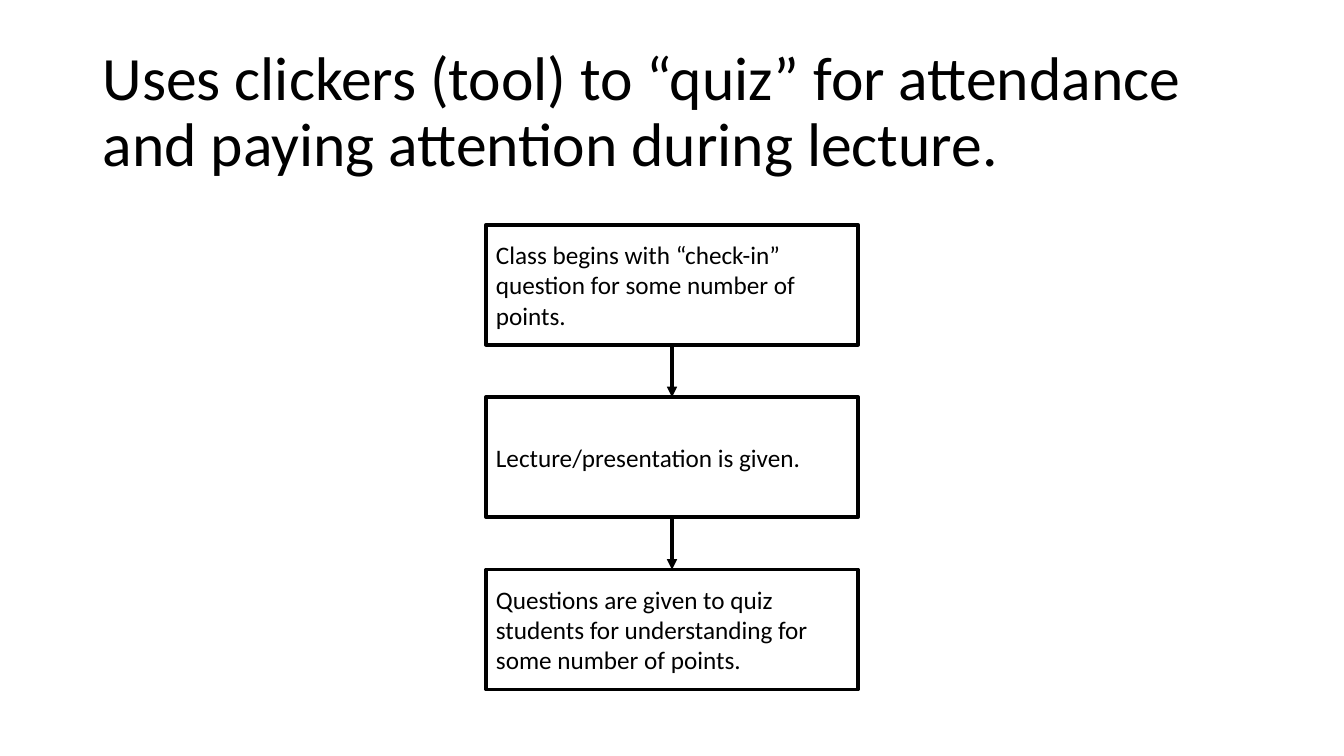
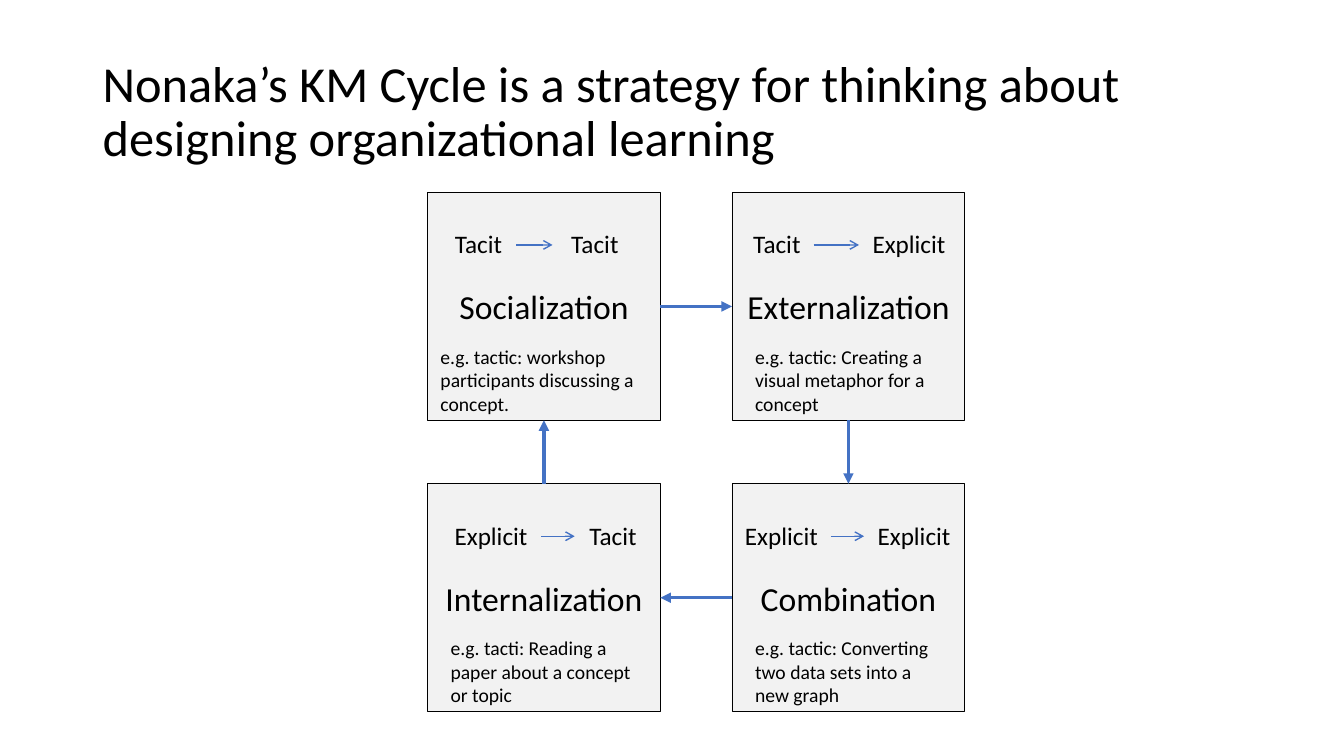
from lxml import etree
from pptx import Presentation
from pptx.dml.color import RGBColor
from pptx.enum.shapes import MSO_CONNECTOR, MSO_SHAPE
from pptx.enum.text import MSO_ANCHOR, MSO_AUTO_SIZE, PP_ALIGN
from pptx.oxml.ns import qn
from pptx.util import Pt

PX = 9144
SLIDE_WIDTH, SLIDE_HEIGHT = 1333, 750
FONT = "Calibri"
COLORS = {"ink": "000000", "panel": "F2F2F2", "accent": "4472C4"}
RECTANGLE = MSO_SHAPE.RECTANGLE
STRAIGHT = MSO_CONNECTOR.STRAIGHT
LEFT, CENTER = PP_ALIGN.LEFT, PP_ALIGN.CENTER
TOP, MIDDLE = MSO_ANCHOR.TOP, MSO_ANCHOR.MIDDLE
GROW = MSO_AUTO_SIZE.SHAPE_TO_FIT_TEXT
SITE_TOP, SITE_LEFT, SITE_BOTTOM, SITE_RIGHT = range(4)

TITLE_BOX = (92, 40, 1150, 145)
STEPS_BOX = (482, 223, 369, 461)
STEP_HEIGHT = 119
CYCLE_BOX = (424, 191, 533, 515)
CELL_WIDTH, CELL_HEIGHT = 231, 226

STEPS = [
    "Class begins with “check-in” question for some number of points.",
    "Lecture/presentation is given.",
    "Questions are given to quiz students for understanding for some number of points.",
]

# Each label and note is (text, left within the cell, width).
CELLS = [
    {"name": "Socialization", "column": 0, "row": 0,
     "source": ("Tacit", 13, 75), "target": ("Tacit", 124, 84),
     "note": ("e.g. tactic: workshop participants discussing a concept.", 3, 228)},
    {"name": "Externalization", "column": 1, "row": 0,
     "source": ("Tacit", 8, 73), "target": ("Explicit", 126, 99),
     "note": ("e.g. tactic: Creating a visual metaphor for a concept", 13, 205)},
    {"name": "Combination", "column": 1, "row": 1,
     "source": ("Explicit", 0, 98), "target": ("Explicit", 131, 99),
     "note": ("e.g. tactic: Converting two data sets into a new graph", 13, 205)},
    {"name": "Internalization", "column": 0, "row": 1,
     "source": ("Explicit", 13, 100), "target": ("Tacit", 146, 76),
     "note": ("e.g. tacti: Reading a paper about a concept or topic", 13, 205)},
]
CYCLE_SITES = [
    (SITE_RIGHT, SITE_LEFT),
    (SITE_BOTTOM, SITE_TOP),
    (SITE_LEFT, SITE_RIGHT),
    (SITE_TOP, SITE_BOTTOM),
]


def color(name):
    """Return the named palette colour."""
    return RGBColor.from_string(COLORS[name])


def emu(lengths):
    """Turn px lengths into EMU."""
    return [round(length * PX) for length in lengths]


def write(shape, text, size, alignment=LEFT, anchor=TOP):
    """Set one styled, wrapping paragraph in a shape and return it."""
    frame = shape.text_frame
    frame.text = text
    frame.word_wrap = True
    frame.vertical_anchor = anchor
    paragraph = frame.paragraphs[0]
    paragraph.alignment = alignment
    font = paragraph.runs[0].font
    font.name = FONT
    font.size = Pt(size)
    font.color.rgb = color("ink")
    return paragraph


def add_title(slide, text, size):
    """Add the slide title."""
    shape = slide.shapes.add_textbox(*emu(TITLE_BOX))
    write(shape, text, size, anchor=MIDDLE).line_spacing = 0.9


def add_label(shapes, box, text, size, alignment=LEFT):
    """Add a text box that grows with its text."""
    shape = shapes.add_textbox(*emu(box))
    write(shape, text, size, alignment)
    shape.text_frame.auto_size = GROW


def add_box(shapes, box, text, size, alignment, line_width, fill=None):
    """Add an outlined rectangle with text in its middle."""
    shape = shapes.add_shape(RECTANGLE, *emu(box))
    shape.shadow.inherit = False
    if fill:
        shape.fill.solid()
        shape.fill.fore_color.rgb = color(fill)
    else:
        shape.fill.background()
    shape.line.color.rgb = color("ink")
    shape.line.width = Pt(line_width)
    write(shape, text, size, alignment, MIDDLE)
    return shape


def add_arrow(shapes, start, end, line_color, width, head="triangle"):
    """Add a straight arrow between two px points."""
    connector = shapes.add_connector(STRAIGHT, *emu(start + end))
    connector.line.color.rgb = color(line_color)
    connector.line.width = Pt(width)
    etree.SubElement(connector.line._get_or_add_ln(), qn("a:tailEnd"), type=head)
    etree.SubElement(connector._element.spPr, qn("a:effectLst"))
    return connector


def link(slide, first, second, sites, line_color):
    """Join two shapes with an arrow glued to their connection sites."""
    connector = add_arrow(slide.shapes, (0, 0), (0, 0), line_color, 2.5)
    connector.begin_connect(first, sites[0])
    connector.end_connect(second, sites[1])


def add_steps(slide, box):
    """Stack the steps evenly in the box and link them downwards."""
    left, top, width, height = box
    pitch = (height - STEP_HEIGHT) / (len(STEPS) - 1)
    shapes = [
        add_box(slide.shapes, (left, top + index * pitch, width, STEP_HEIGHT),
                text, 18, LEFT, 2.75)
        for index, text in enumerate(STEPS)
    ]
    for first, second in zip(shapes, shapes[1:]):
        link(slide, first, second, (SITE_BOTTOM, SITE_TOP), "ink")


def add_cell(slide, left, top, cell):
    """Add one grouped stage of the cycle and return its panel."""
    shapes = slide.shapes.add_group_shape().shapes
    panel = add_box(shapes, (left, top, CELL_WIDTH, CELL_HEIGHT),
                    cell["name"], 24, CENTER, 0.5, "panel")
    for key in ("source", "target"):
        text, offset, width = cell[key]
        add_label(shapes, (left + offset, top + 31, width, 41), text, 18, CENTER)
    text, offset, width = cell["note"]
    add_label(shapes, (left + offset, top + 146, width, 81), text, 14)
    source_end = left + cell["source"][1] + cell["source"][2]
    target_start = left + cell["target"][1]
    add_arrow(shapes, (source_end, top + 52), (target_start, top + 52),
              "accent", 1, "arrow")
    return panel


def add_cycle(slide, box):
    """Place the four stages in the box corners and link them clockwise."""
    left, top, width, height = box
    panels = [
        add_cell(slide, left + cell["column"] * (width - CELL_WIDTH),
                 top + cell["row"] * (height - CELL_HEIGHT), cell)
        for cell in CELLS
    ]
    for first, second, sites in zip(panels, panels[1:] + panels[:1], CYCLE_SITES):
        link(slide, first, second, sites, "accent")


def main():
    """Build and save the presentation."""
    presentation = Presentation()
    presentation.slide_width, presentation.slide_height = emu((SLIDE_WIDTH, SLIDE_HEIGHT))
    blank = presentation.slide_layouts[6]

    slide = presentation.slides.add_slide(blank)
    add_title(slide, "Uses clickers (tool) to “quiz” for attendance and paying "
                     "attention during lecture.", 44)
    add_steps(slide, STEPS_BOX)

    slide = presentation.slides.add_slide(blank)
    add_title(slide, "Nonaka’s KM Cycle is a strategy for thinking about "
                     "designing organizational learning", 36)
    add_cycle(slide, CYCLE_BOX)

    presentation.save("out.pptx")


if __name__ == "__main__":
    main()
